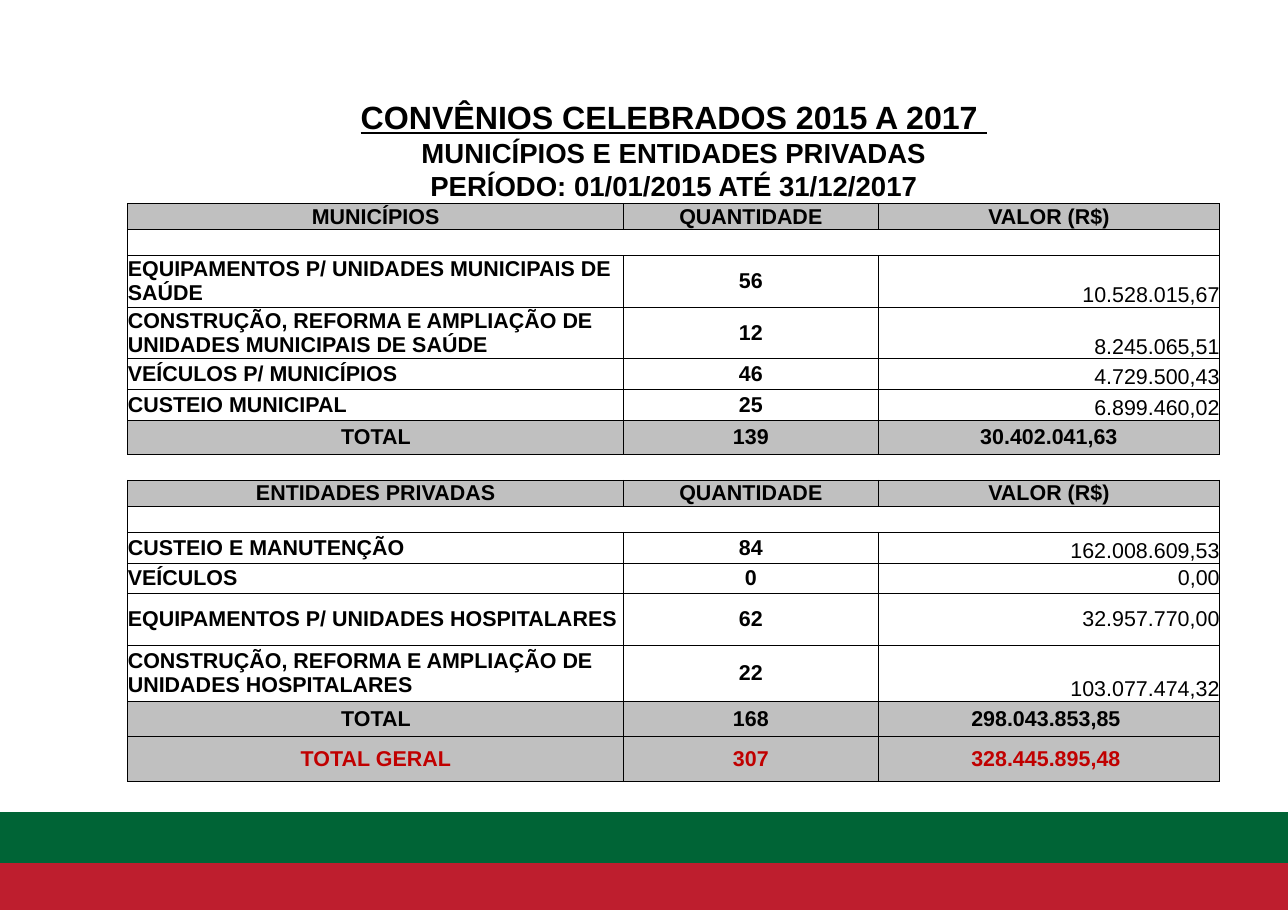
from dataclasses import dataclass

from lxml import etree
from pptx import Presentation
from pptx.dml.color import RGBColor
from pptx.enum.shapes import MSO_SHAPE
from pptx.enum.text import MSO_ANCHOR, PP_ALIGN
from pptx.oxml.ns import qn
from pptx.util import Inches, Pt

RECT = MSO_SHAPE.RECTANGLE
LEFT, MID, RIGHT = PP_ALIGN.LEFT, PP_ALIGN.CENTER, PP_ALIGN.RIGHT
CENTER, LOW = MSO_ANCHOR.MIDDLE, MSO_ANCHOR.BOTTOM

WIDE, HIGH = Inches(11.69), Inches(8.27)
FONT = "Arial"
BLACK, GRAY, RED = "000000", "C0C0C0", "C00000"
PLAIN = "{2D5ABB26-0587-4C30-8999-92F81FD0307C}"  # table style without grid
COLS = (38.5, 19.76, 26.52)  # percent of slide width
SLIM, ITEM, TALL = 2.84, 3.39, 5.66  # row heights, percent of slide height


@dataclass(frozen=True)
class Band:
    top: float
    high: float
    color: str


@dataclass(frozen=True)
class Row:
    high: float
    texts: tuple[str, ...] = ("",)
    sides: str = "LRTB"
    fill: str = ""
    color: str = BLACK
    size: int = 14
    line: bool = False
    item: bool = False
    low: bool = True


def title(high: float, text: str, size: int, line: bool = False, sides: str = "") -> Row:
    return Row(high, (text,), sides, size=size, line=line)


def head(name: str) -> Row:
    return Row(SLIM, (name, "QUANTIDADE", "VALOR (R$)"), fill=GRAY)


def item(high: float, name: str, count: str, value: str, low: bool = True) -> Row:
    return Row(high, (name, count, value), item=True, low=low)


def total(high: float, name: str, count: str, value: str, color: str = BLACK) -> Row:
    return Row(high, (name, count, value), fill=GRAY, color=color)


BANDS = (Band(94.44, 5.44, "BE1E2E"), Band(89.24, 5.44, "006436"))

ROWS = (
    title(4.23, "CONVÊNIOS CELEBRADOS 2015 A 2017 ", 21, line=True),
    title(3.63, "MUNICÍPIOS E ENTIDADES PRIVADAS", 18),
    title(3.63, "PERÍODO: 01/01/2015 ATÉ 31/12/2017", 18, sides="B"),
    head("MUNICÍPIOS"),
    Row(SLIM),
    item(TALL, "EQUIPAMENTOS P/ UNIDADES MUNICIPAIS DE SAÚDE", "56", "10.528.015,67"),
    item(TALL, "CONSTRUÇÃO, REFORMA E AMPLIAÇÃO DE UNIDADES MUNICIPAIS DE SAÚDE",
         "12", "8.245.065,51"),
    item(ITEM, "VEÍCULOS P/ MUNICÍPIOS", "46", "4.729.500,43"),
    item(ITEM, "CUSTEIO MUNICIPAL", "25", "6.899.460,02"),
    total(3.69, " TOTAL ", "139", "30.402.041,63"),
    Row(SLIM, ("", "", ""), "TB"),
    head("ENTIDADES PRIVADAS"),
    Row(SLIM),
    item(ITEM, "CUSTEIO E MANUTENÇÃO", "84", "162.008.609,53"),
    item(3.33, "VEÍCULOS", "0", "0,00", low=False),
    item(TALL, "EQUIPAMENTOS P/ UNIDADES HOSPITALARES", "62", "32.957.770,00", low=False),
    item(6.23, "CONSTRUÇÃO, REFORMA E AMPLIAÇÃO DE UNIDADES HOSPITALARES",
         "22", "103.077.474,32"),
    total(3.87, " TOTAL ", "168", "298.043.853,85 "),
    total(4.94, " TOTAL GERAL ", "307", "328.445.895,48 ", RED),
)


def across(share: float) -> int:
    return round(WIDE * share / 100)


def down(share: float) -> int:
    return round(HIGH * share / 100)


def rgb(color: str) -> RGBColor:
    return RGBColor.from_string(color)


def add_band(slide, band: Band) -> None:
    shape = slide.shapes.add_shape(RECT, 0, down(band.top), WIDE, down(band.high))
    shape.shadow.inherit = False
    shape.fill.solid()
    shape.fill.fore_color.rgb = rgb(band.color)
    shape.line.color.rgb = rgb(band.color)
    shape.line.width = Pt(0.75)


def add_edges(cell, sides: str) -> None:
    props = cell._tc.get_or_add_tcPr()
    for side in sides:
        edge = etree.SubElement(props, qn(f"a:ln{side}"), w=str(Pt(0.5)))
        paint = etree.SubElement(edge, qn("a:solidFill"))
        etree.SubElement(paint, qn("a:srgbClr"), val=BLACK)


def paint_cell(cell, row: Row) -> None:
    add_edges(cell, row.sides)
    if row.fill:
        cell.fill.solid()
        cell.fill.fore_color.rgb = rgb(row.fill)
    else:
        cell.fill.background()
    cell.margin_left = cell.margin_right = 0
    cell.margin_top = cell.margin_bottom = 0


def write_cell(cell, row: Row, col: int) -> None:
    value = row.item and col == 2
    cell.vertical_anchor = LOW if value and row.low else CENTER
    para = cell.text_frame.paragraphs[0]
    para.alignment = (LEFT, MID, RIGHT)[col] if row.item else MID
    text = row.texts[col]
    if not text:
        # Keep an empty row as low as a line of body text
        etree.SubElement(para._p, qn("a:endParaRPr"), sz=str(row.size * 100))
        return
    run = para.add_run()
    run.text = text
    font = run.font
    font.name, font.size = FONT, Pt(row.size)
    font.bold, font.underline = not value, row.line
    font.color.rgb = rgb(row.color)


def add_grid(slide) -> None:
    high = sum(row.high for row in ROWS)
    frame = slide.shapes.add_table(len(ROWS), len(COLS), across(9.92), down(10.88),
                                   across(sum(COLS)), down(high))
    table = frame.table
    table.first_row = table.horz_banding = False
    table._tbl.tblPr.find(qn("a:tableStyleId")).text = PLAIN
    for col, share in enumerate(COLS):
        table.columns[col].width = across(share)
    for at, row in enumerate(ROWS):
        table.rows[at].height = down(row.high)
        for col in range(len(COLS)):
            paint_cell(table.cell(at, col), row)
        if len(row.texts) == 1:
            table.cell(at, 0).merge(table.cell(at, len(COLS) - 1))
        for col in range(len(row.texts)):
            write_cell(table.cell(at, col), row, col)


def main() -> None:
    deck = Presentation()
    deck.slide_width, deck.slide_height = WIDE, HIGH
    slide = deck.slides.add_slide(deck.slide_layouts[6])
    # Footer bands, then the table with its headings
    for band in BANDS:
        add_band(slide, band)
    add_grid(slide)
    deck.save("out.pptx")


if __name__ == "__main__":
    main()
